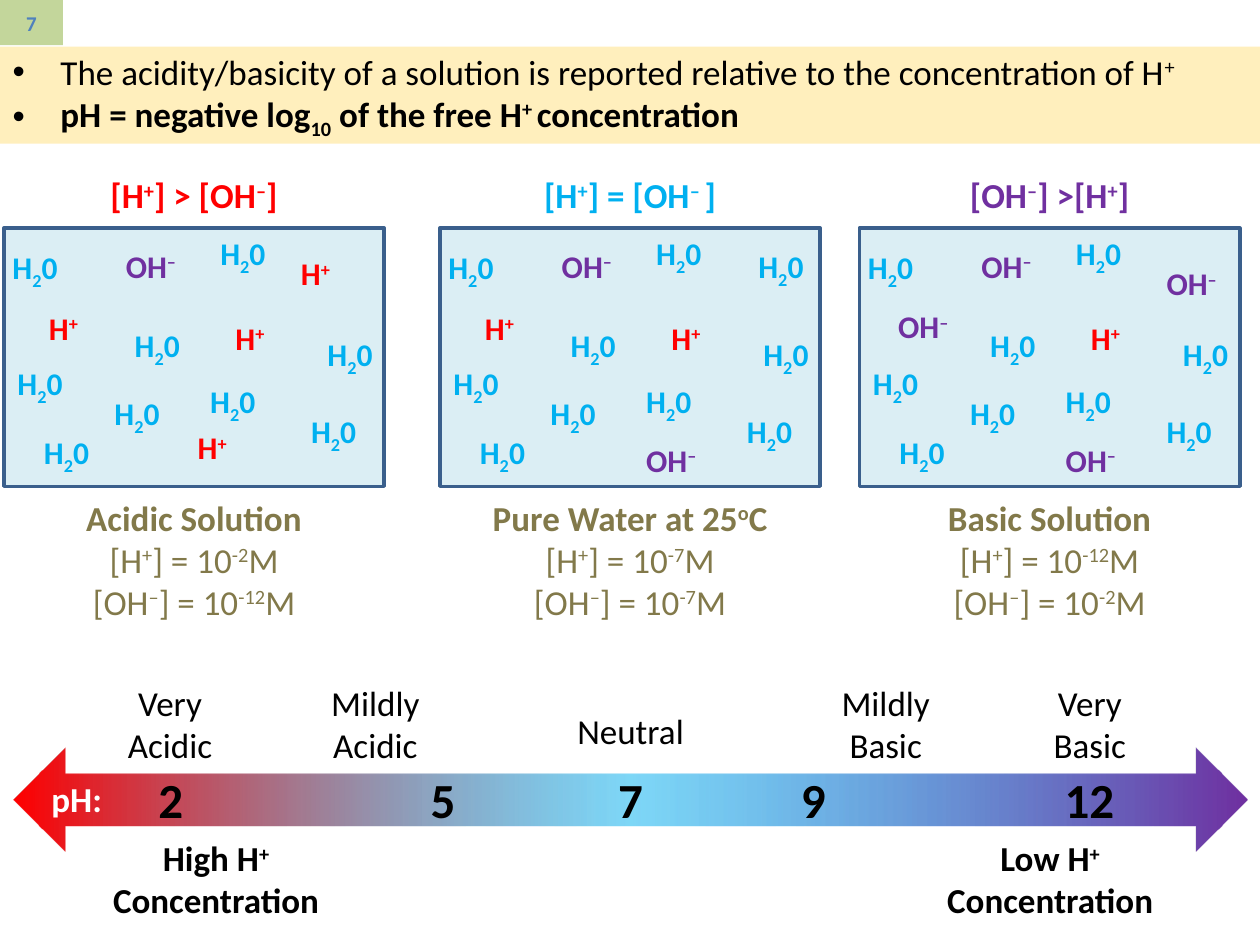
import copy
import pptx
import pptx.dml.color
import pptx.enum.shapes
import pptx.enum.text
import pptx.oxml.ns
import pptx.util
import lxml.etree

HUES = {
    "red": "FF0000", "blue": "00B0F0", "purple": "7030A0", "olive": "82794A",
    "black": "000000", "white": "FFFFFF", "pale": "DBEEF4", "edge": "3A5F8C",
    "cream": "FFEFBD", "green": "C3D69B", "steel": "4F81BD",
}
PX = 9144
BASE = {"^": 30000, "_": -25000}

FACTS = [
    ("The acidity/basicity of a solution is reported relative to the concentration of H|^+", False),
    ("pH = negative log|_10| of the free H|^+ |concentration", True),
]
KINDS = {
    "water": ("H|_2|0", "blue", 58),
    "acid": ("H|^+", "red", 45),
    "base": ("OH|^–", "purple", 62),
}
SHARED = [
    ("base", 87, 191), ("acid", 174, 248), ("water", 154, 298),
    ("water", 94, 254), ("water", 162, 181), ("water", 78, 308),
    ("water", 1, 284), ("water", -3, 192), ("water", 247, 261),
    ("water", 234, 322), ("water", 22, 339),
]
TANKS = [
    (3, "[H|^+|] > [OH|^–|]", "red", "Acidic Solution", "-2", "-12",
     [("acid", 26, 240), ("acid", 144, 335), ("acid", 226, 197)]),
    (349, "[H|^+|] = [OH|^– |]", "blue", "Pure Water at 25|^o|C", "-7", "-7",
     [("acid", 26, 240), ("base", 154, 345), ("water", 243, 191)]),
    (682, "[OH|^–|] >[H|^+|]", "purple", "Basic Solution", "-12", "-2",
     [("base", 21, 239), ("base", 154, 345), ("base", 234, 205)]),
]
STOPS = [(0, "red", None), (50, "blue", 50), (100, "purple", None)]
ZONES = [
    ("Very Acidic", 78, 536, 114), ("Mildly Acidic", 241, 536, 114),
    ("Neutral", 374, 558, 253), ("Mildly Basic", 646, 536, 114),
    ("Very Basic", 808, 536, 114),
]
MARKS = [("2", 98), ("5", 314), ("7", 463), ("9", 608), ("12", 827)]
ENDS = [("High H|^+| Concentration", 78), ("Low H|^+| Concentration", 740)]

ALIGN = pptx.enum.text.PP_ALIGN
SHAPE = pptx.enum.shapes.MSO_SHAPE
qn = pptx.oxml.ns.qn


def tint(name):
    return pptx.dml.color.RGBColor.from_string(HUES[name])


def write(para, text, size, hue, bold=False, align=ALIGN.LEFT):
    para.alignment = align
    for part in text.split("|"):
        run = para.add_run()
        run.text = part.lstrip("^_")
        font = run.font
        font.name, font.size, font.bold = "Calibri", pptx.util.Pt(size), bold
        font.color.rgb = tint(hue)
        if part[0] in BASE:
            font._element.set("baseline", str(BASE[part[0]]))


def place(shapes, box, lines, size, hue, align=ALIGN.CENTER, wrap=True):
    frame = shapes.add_textbox(*[n * PX for n in box]).text_frame
    frame.word_wrap = wrap
    for i, (text, bold) in enumerate(lines):
        para = frame.add_paragraph() if i else frame.paragraphs[0]
        write(para, text, size, hue, bold, align)


def draw(shapes, kind, box, fill=None, edge=None):
    shape = shapes.add_shape(kind, *[n * PX for n in box])
    shape.shadow.inherit = False
    if fill:
        shape.fill.solid()
        shape.fill.fore_color.rgb = tint(fill)
    if edge:
        shape.line.color.rgb = tint(edge)
        shape.line.width = pptx.util.Pt(2)
    else:
        shape.line.fill.background()
    return shape


def add_facts(slide):
    title = slide.shapes.title._element
    title.getparent().remove(title)
    body = slide.placeholders[1]
    body.left, body.top, body.width, body.height = [n * PX for n in (0, 37, 1000, 77)]
    body.fill.solid()
    body.fill.fore_color.rgb = tint("cream")
    frame = body.text_frame
    frame.auto_size = pptx.enum.text.MSO_AUTO_SIZE.NONE
    frame.vertical_anchor = pptx.enum.text.MSO_ANCHOR.MIDDLE
    for i, (text, bold) in enumerate(FACTS):
        para = frame.add_paragraph() if i else frame.paragraphs[0]
        write(para, text, 20, "black", bold)
        para.space_before = pptx.util.Pt(0)
        props = para._p.get_or_add_pPr()
        props.set("marL", str(38 * PX))
        props.set("indent", str(-38 * PX))


def add_tank(slide, left, ratio, hue, name, acid, base, extra):
    place(slide.shapes, (left, 133, 302, 44), [(ratio, True)], 20, hue)
    lines = [(name, True), (f"[H|^+|] = 10|^{acid}|M", False),
             (f"[OH|^–|] = 10|^{base}|M", False)]
    place(slide.shapes, (left, 389, 302, 111), lines, 20, "olive")
    group = slide.shapes.add_group_shape().shapes
    draw(group, SHAPE.RECTANGLE, (left, 181, 302, 205), "pale", "edge")
    for kind, x, y in SHARED + extra:
        text, shade, width = KINDS[kind]
        place(group, (left + x, y, width, 40), [(text, True)], 18, shade,
              ALIGN.LEFT, False)


def blend(shape):
    shape.fill.gradient()
    shape.fill.gradient_angle = 0
    row = shape._element.spPr.find(".//" + qn("a:gsLst"))
    model = copy.deepcopy(row[0])
    for old in list(row):
        row.remove(old)
    for spot, hue, alpha in STOPS:
        stop = copy.deepcopy(model)
        stop.set("pos", str(spot * 1000))
        for old in list(stop):
            stop.remove(old)
        shade = lxml.etree.SubElement(stop, qn("a:srgbClr"), val=HUES[hue])
        if alpha:
            lxml.etree.SubElement(shade, qn("a:alpha"), val=str(alpha * 1000))
        row.append(stop)


def add_scale(slide):
    group = slide.shapes.add_group_shape().shapes
    blend(draw(group, SHAPE.LEFT_RIGHT_ARROW, (11, 593, 979, 83)))
    for text, x, y, width in ZONES:
        place(group, (x, y, width, 77), [(text, False)], 20, "black")
    for text, x in MARKS:
        place(group, (x, 606, 75, 57), [(text, True)], 28, "black")
    for text, x in ENDS:
        place(group, (x, 659, 187, 77), [(text, True)], 20, "black")
    place(group, (31, 612, 85, 44), [("pH:", True)], 20, "white", ALIGN.LEFT)


def main():
    deck = pptx.Presentation()
    deck.slide_width, deck.slide_height = 1000 * PX, 750 * PX
    slide = deck.slides.add_slide(deck.slide_layouts[1])
    add_facts(slide)
    badge = draw(slide.shapes, SHAPE.RECTANGLE, (0, 0, 50, 36), "green")
    write(badge.text_frame.paragraphs[0], "7", 12, "steel", True, ALIGN.CENTER)
    for tank in TANKS:
        add_tank(slide, *tank)
    add_scale(slide)
    deck.save("out.pptx")


if __name__ == "__main__":
    main()
